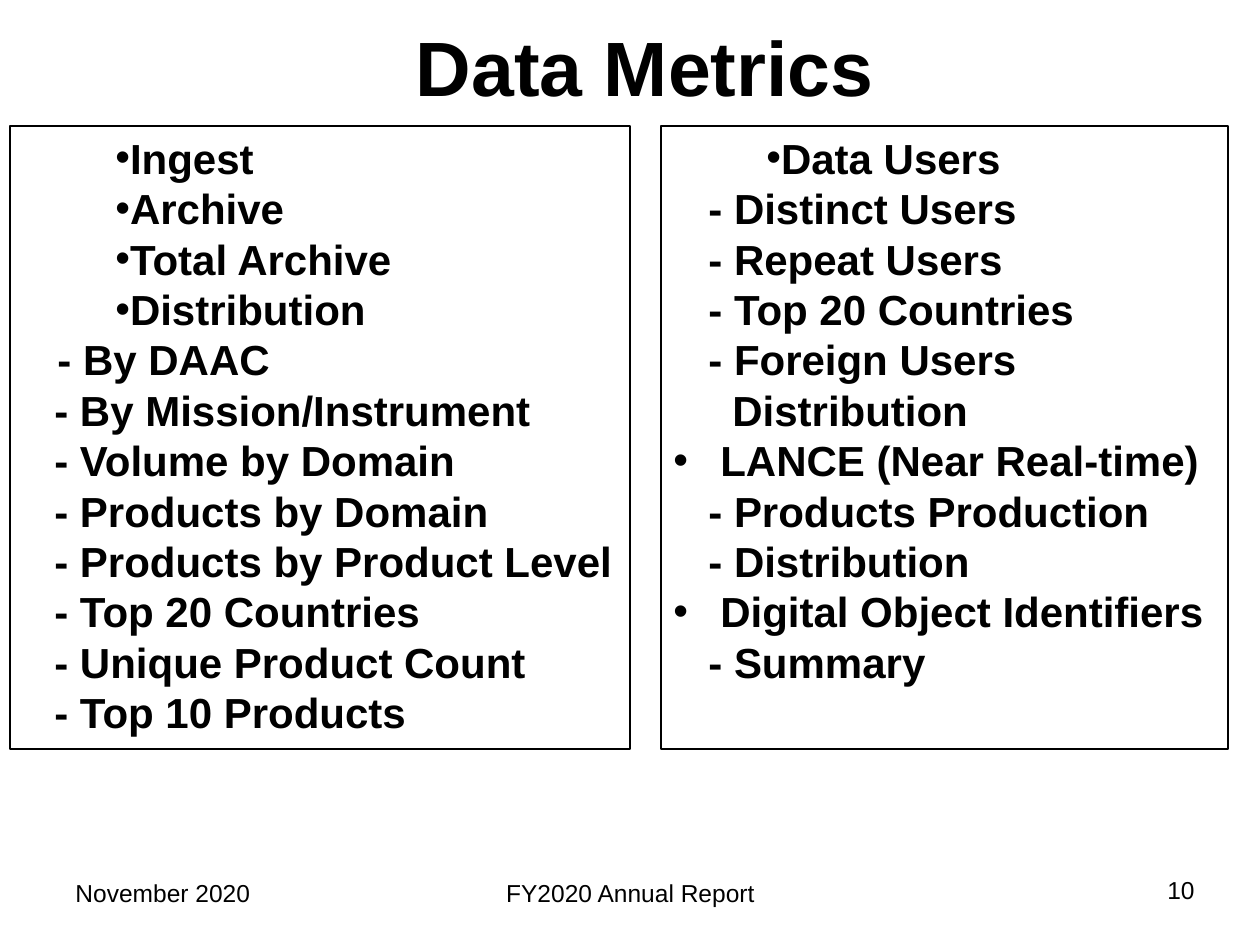
from lxml import etree
from pptx import Presentation
from pptx import util as u
from pptx.dml.color import RGBColor
from pptx.enum import shapes, text
from pptx.oxml.ns import qn

PX_PER_INCH = 126
BLACK, WHITE = "000000", "FFFFFF"
FONT = "Arial"

# Paragraph styles: left margin px, first-line indent px, bulleted
TOPIC = (0, 93, True)
HANGING = (47, -47, True)
METRIC = (35, 0, False)
DETAIL = (32, 0, False)
CONTINUED = (59, 0, False)

DATA_ITEMS = [
    ("Ingest", TOPIC),
    ("Archive", TOPIC),
    ("Total Archive", TOPIC),
    ("Distribution", TOPIC),
    ("- By DAAC", METRIC),
    ("- By Mission/Instrument", DETAIL),
    ("- Volume by Domain", DETAIL),
    ("- Products by Domain", DETAIL),
    ("- Products by Product Level", DETAIL),
    ("- Top 20 Countries", DETAIL),
    ("- Unique Product Count", DETAIL),
    ("- Top 10 Products", DETAIL),
]
USER_ITEMS = [
    ("Data Users", TOPIC),
    ("- Distinct Users", METRIC),
    ("- Repeat Users", METRIC),
    ("- Top 20 Countries", METRIC),
    ("- Foreign Users", METRIC),
    ("Distribution", CONTINUED),
    ("LANCE (Near Real-time)", HANGING),
    ("- Products Production", METRIC),
    ("- Distribution", METRIC),
    ("Digital Object Identifiers", HANGING),
    ("- Summary", METRIC),
]


def px(length):
    return u.Emu(round(length * 914400 / PX_PER_INCH))


def color(value):
    return RGBColor.from_string(value)


def style_font(paragraph, size, bold=False):
    font = paragraph.font
    font.name, font.size, font.bold = FONT, u.Pt(size), bold
    font.color.rgb = color(BLACK)


def set_indent(paragraph, margin, indent, bulleted):
    properties = paragraph._p.get_or_add_pPr()
    properties.set("marL", str(px(margin)))
    properties.set("indent", str(px(indent)))
    if bulleted:
        etree.SubElement(properties, qn("a:buFont"), typeface=FONT)
        etree.SubElement(properties, qn("a:buChar"), char="•")
    else:
        etree.SubElement(properties, qn("a:buNone"))


def add_label(slide, box, words, size, alignment, bold=False,
              anchor=text.MSO_ANCHOR.TOP):
    frame = slide.shapes.add_textbox(*map(px, box)).text_frame
    frame.word_wrap = True
    frame.vertical_anchor = anchor
    paragraph = frame.paragraphs[0]
    paragraph.text = words
    paragraph.alignment = alignment
    style_font(paragraph, size, bold)


def add_metric_panel(slide, box, items):
    """Outlined box listing topics and the metrics under them."""
    panel = slide.shapes.add_shape(shapes.MSO_SHAPE.RECTANGLE, *map(px, box))
    panel.shadow.inherit = False
    panel.fill.background()
    panel.line.color.rgb = color(BLACK)
    panel.line.width = u.Pt(1.5)
    frame = panel.text_frame
    frame.word_wrap = True
    frame.vertical_anchor = text.MSO_ANCHOR.TOP
    for index, (words, style) in enumerate(items):
        paragraph = frame.add_paragraph() if index else frame.paragraphs[0]
        paragraph.text = words
        paragraph.alignment = text.PP_ALIGN.LEFT
        set_indent(paragraph, *style)
        style_font(paragraph, 24, bold=True)


def add_footer(slide, top):
    align = text.PP_ALIGN
    add_label(slide, (63, top, 294, 66), "November 2020", 14, align.LEFT)
    add_label(slide, (431, top, 399, 66), "FY2020 Annual Report", 14,
              align.CENTER)
    add_label(slide, (913, top - 3, 294, 66), "10", 14, align.RIGHT)


def main():
    presentation = Presentation()
    presentation.slide_width, presentation.slide_height = px(1260), px(945)
    slide = presentation.slides.add_slide(presentation.slide_layouts[6])
    slide.background.fill.solid()
    slide.background.fill.fore_color.rgb = color(WHITE)

    add_label(slide, (78, -18, 1134, 168), "Data Metrics", 44,
              text.PP_ALIGN.CENTER, bold=True, anchor=text.MSO_ANCHOR.MIDDLE)
    add_metric_panel(slide, (10, 126, 620, 623), DATA_ITEMS)
    add_metric_panel(slide, (661, 126, 567, 623), USER_ITEMS)
    add_footer(slide, 872)
    presentation.save("out.pptx")


if __name__ == "__main__":
    main()
